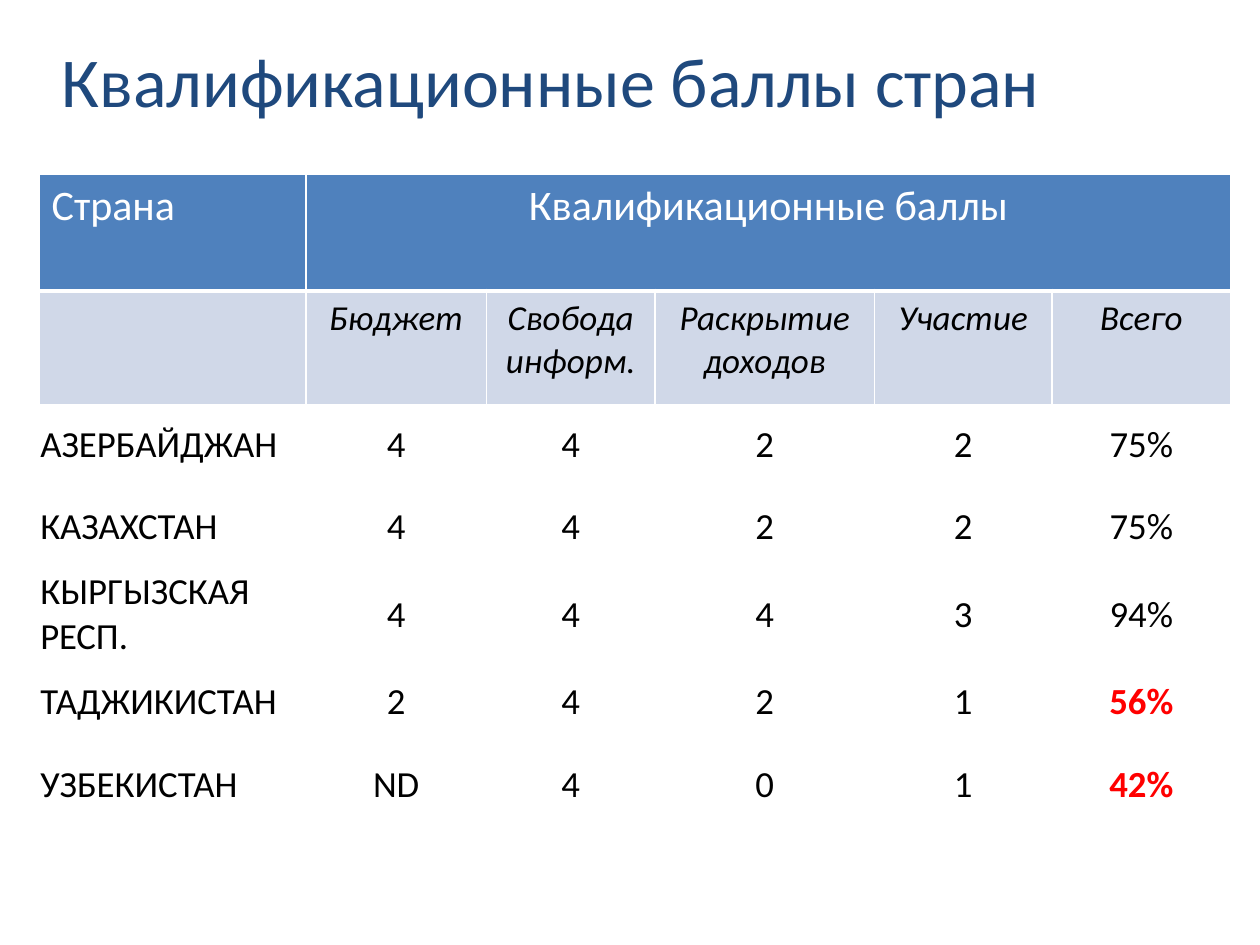
from pptx import Presentation
from pptx import util as u
from pptx.dml.color import RGBColor
from pptx.enum import text
from pptx.oxml.ns import qn
from lxml import etree

# Content
TITLE = "Квалификационные баллы стран"
ROWS = [
    ["Страна", "Квалификационные баллы", "", "", "", ""],
    ["", "Бюджет", "Свобода\nинформ.", "Раскрытие доходов", "Участие", "Всего"],
    ["АЗЕРБАЙДЖАН", "4", "4", "2", "2", "75%"],
    ["КАЗАХСТАН", "4", "4", "2", "2", "75%"],
    ["КЫРГЫЗСКАЯ РЕСП.", "4", "4", "4", "3", "94%"],
    ["ТАДЖИКИСТАН", "2", "4", "2", "1", "56%"],
    ["УЗБЕКИСТАН", "ND", "4", "0", "1", "42%"],
    ["", "", "", "", "", ""],
]
LOW_SCORES = {"56%", "42%"}
COLS = [2.12, 1.43, 1.34, 1.74, 1.41, 1.42]
HEIGHTS = [0.93, 0.9, 0.64, 0.66, 0.66, 0.66, 0.66, 0.64]

# Row styles: fill, text colour, size, italic
HEADER = ("4F81BD", "FFFFFF", 24, False)
SUBHEADER = ("D0D8E8", "000000", 20, True)
BODY = ("FFFFFF", "000000", 21, False)
FONT = "Calibri"


def rgb(value):
    return RGBColor.from_string(value)


def style_runs(tf, size, color, bold=False, italic=False):
    for p in tf.paragraphs:
        for r in p.runs:
            f = r.font
            f.name, f.size, f.bold, f.italic = FONT, u.Pt(size), bold, italic
            f.color.rgb = rgb(color)


def set_borders(cell, bottom):
    tcPr = cell._tc.get_or_add_tcPr()
    for side, width in (("L", 1), ("R", 1), ("T", 1), ("B", bottom)):
        ln = etree.SubElement(tcPr, qn(f"a:ln{side}"), w=str(u.Pt(width)))
        fill = etree.SubElement(ln, qn("a:solidFill"))
        etree.SubElement(fill, qn("a:srgbClr"), val="FFFFFF")


def format_cell(cell, value, row, col):
    back, color, size, italic = (HEADER, SUBHEADER)[row] if row < 2 else BODY
    set_borders(cell, 3 if row == 0 else 1)
    cell.fill.solid()
    cell.fill.fore_color.rgb = rgb(back)
    if row > 1 and value:
        cell.vertical_anchor = text.MSO_ANCHOR.MIDDLE
        cell.margin_left = cell.margin_right = cell.margin_top = u.Inches(0.01)
        cell.margin_bottom = 0
    tf = cell.text_frame
    tf.text = value
    if col:
        for p in tf.paragraphs:
            p.alignment = text.PP_ALIGN.CENTER
    low = value in LOW_SCORES
    style_runs(tf, size, "FF0000" if low else color, low, italic)


prs = Presentation()
prs.slide_width, prs.slide_height = u.Inches(10), u.Inches(7.5)
s = prs.slides.add_slide(prs.slide_layouts[5])

# Title
title = s.shapes.title
title.left, title.top, title.width, title.height = map(u.Inches, (0.39, 0.01, 9.33, 1.25))
tf = title.text_frame
tf.text = TITLE
tf.vertical_anchor = text.MSO_ANCHOR.MIDDLE
tf.paragraphs[0].alignment = text.PP_ALIGN.LEFT
style_runs(tf, 40, "1F497D")

# Score table
table = s.shapes.add_table(len(ROWS), len(COLS), u.Inches(0.31), u.Inches(1.38),
                           u.Inches(sum(COLS)), u.Inches(sum(HEIGHTS))).table
for column, width in zip(table.columns, COLS):
    column.width = u.Inches(width)
for line, height in zip(table.rows, HEIGHTS):
    line.height = u.Inches(height)
for row, values in enumerate(ROWS):
    for col, value in enumerate(values):
        format_cell(table.cell(row, col), value, row, col)
table.cell(0, 1).merge(table.cell(0, len(COLS) - 1))

prs.save("out.pptx")
